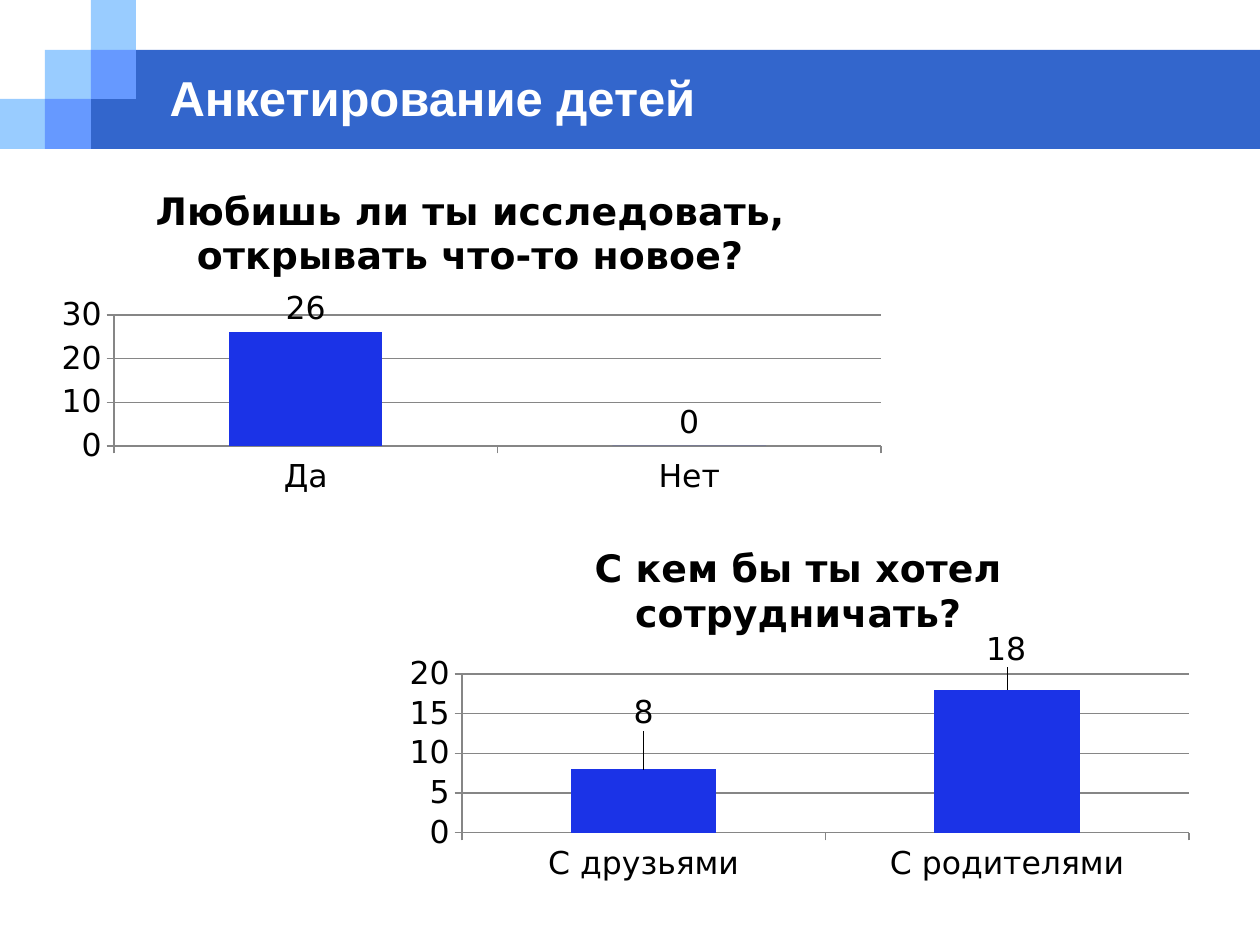
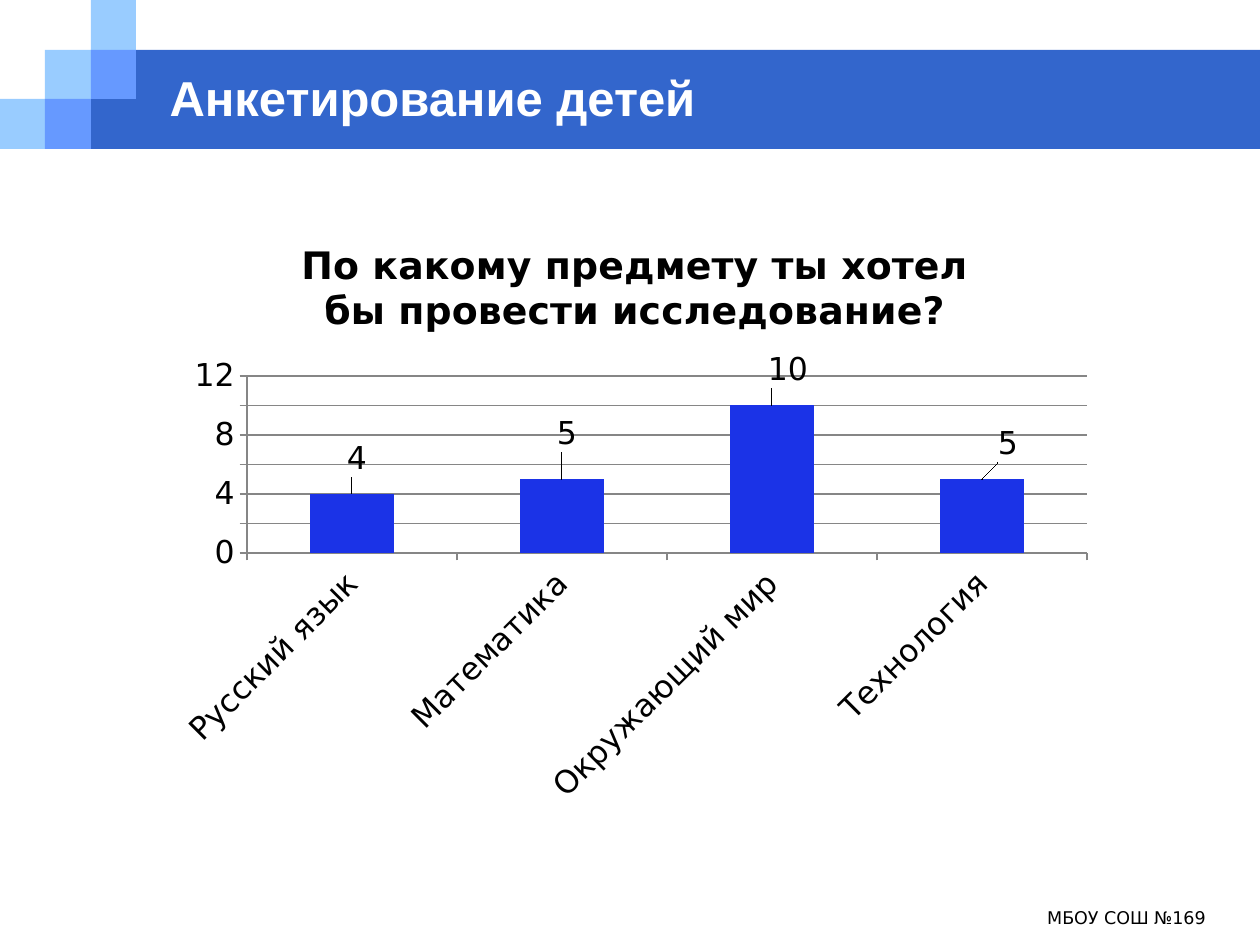
from lxml import etree
from pptx import Presentation
from pptx.chart.data import CategoryChartData
from pptx.dml.color import RGBColor
from pptx.enum.chart import XL_CHART_TYPE, XL_LABEL_POSITION, XL_TICK_MARK
from pptx.enum.shapes import MSO_SHAPE
from pptx.enum.text import MSO_ANCHOR, MSO_AUTO_SIZE, PP_ALIGN
from pptx.oxml.ns import qn
from pptx.util import Pt

COLUMNS = XL_CHART_TYPE.COLUMN_CLUSTERED
OUTSIDE_END = XL_LABEL_POSITION.OUTSIDE_END
TICK_OUTSIDE = XL_TICK_MARK.OUTSIDE
RECTANGLE = MSO_SHAPE.RECTANGLE
MIDDLE = MSO_ANCHOR.MIDDLE
NO_AUTOFIT = MSO_AUTO_SIZE.NONE
LEFT, RIGHT = PP_ALIGN.LEFT, PP_ALIGN.RIGHT

PAGE = (1260, 945)
EMU_PER_INCH, PX_PER_INCH = 914400, 126
TITLE_ONLY = 5

BAND, SKY, PERIWINKLE = "3366CC", "99CCFF", "6699FF"
BAR, AXIS, BLACK, WHITE = "1B33E7", "868686", "000000", "FFFFFF"

TITLE_FONT = {"name": "Arial", "size": Pt(28), "bold": True}
FOOTER_FONT = {"name": "DejaVu Sans", "size": Pt(10), "bold": False}
CHART_FONT = {"name": "DejaVu Sans", "size": Pt(18), "bold": False}
QUESTION_FONT = {"name": "DejaVu Sans", "size": Pt(21.6), "bold": True}

BAND_BOX = (91, 50, 1169, 99)
TITLE_BOX = (157, 63, 1018, 67)
FOOTER_BOX = (819, 901, 399, 44)
# Checkered corner: grid edges, then (column, row, colour)
COLUMN_EDGES = (0, 45, 91, 136)
ROW_EDGES = (0, 50, 99, 149)
SQUARES = [(0, 2, SKY), (1, 1, SKY), (2, 0, SKY),
           (2, 1, PERIWINKLE), (1, 2, PERIWINKLE)]

TITLE = "Анкетирование детей"
SCHOOL = "МБОУ СОШ №169"

# "plot" is relative to the chart box; "shifts" move the value labels
EXPLORE = {
    "question": "Любишь ли ты исследовать, открывать что-то новое?",
    "box": (44, 165, 853, 338), "plot": (70, 150, 767, 131),
    "answers": {"Да": 26, "Нет": 0}, "top": 30, "step": 10,
    "shifts": [], "turn": 0}
PARTNER = {
    "question": "С кем бы ты хотел сотрудничать?",
    "box": (393, 522, 811, 367), "plot": (69, 152, 727, 159),
    "answers": {"С друзьями": 8, "С родителями": 18}, "top": 20, "step": 5,
    "shifts": [(0, -33), (-1, -17)], "turn": 0}
SUBJECT = {
    "question": "По какому предмету ты хотел бы провести исследование?",
    "box": (164, 214, 942, 602), "plot": (83, 162, 840, 177),
    "answers": {"Русский язык": 4, "Математика": 5,
                "Окружающий мир": 10, "Технология": 5},
    "top": 12, "step": 2,
    "shifts": [(5, -12), (5, -22), (16, -12), (26, -12)], "turn": -45}


def px(length):
    return round(length * EMU_PER_INCH / PX_PER_INCH)


def emu(box):
    return [px(length) for length in box]


def rgb(color):
    return RGBColor.from_string(color)


def style(font, values, color):
    for name, value in values.items():
        setattr(font, name, value)
    font.color.rgb = rgb(color)


def write(frame, text, font, color, align):
    frame.word_wrap = True
    frame.auto_size = NO_AUTOFIT
    para = frame.paragraphs[0]
    para.alignment = align
    span = para.add_run()
    span.text = text
    style(span.font, font, color)


def add_block(page, box, color):
    block = page.shapes.add_shape(RECTANGLE, *emu(box))
    block.shadow.inherit = False
    block.fill.solid()
    block.fill.fore_color.rgb = rgb(color)
    block.line.fill.background()
    return block


def draw_header(page):
    """Draw the band and squares, then hand them to the shared layout."""
    blocks = [add_block(page, BAND_BOX, BAND)]
    for column, row, color in SQUARES:
        left, right = COLUMN_EDGES[column:column + 2]
        top, bottom = ROW_EDGES[row:row + 2]
        blocks.append(add_block(page, (left, top, right - left, bottom - top), color))
    tree = page.slide_layout.shapes.element
    for number, block in enumerate(blocks):
        block.element.nvSpPr.cNvPr.set("id", str(100 + number))
        tree.insert(2 + number, block.element)


def add_page(deck):
    page = deck.slides.add_slide(deck.slide_layouts[TITLE_ONLY])
    title = page.shapes.title
    title.left, title.top, title.width, title.height = emu(TITLE_BOX)
    title.text_frame.vertical_anchor = MIDDLE
    write(title.text_frame, TITLE, TITLE_FONT, WHITE, LEFT)
    return page


def add_footer(page):
    footer = page.shapes.add_textbox(*emu(FOOTER_BOX))
    write(footer.text_frame, SCHOOL, FOOTER_FONT, BLACK, RIGHT)


def manual_layout(values):
    layout = etree.Element(qn("c:layout"))
    manual = etree.SubElement(layout, qn("c:manualLayout"))
    for name, value in values.items():
        etree.SubElement(manual, qn(f"c:{name}")).set("val", str(value))
    return layout


def place_plot(chart, box, plot):
    area = chart.element.find(f".//{qn('c:plotArea')}")
    for old in area.findall(qn("c:layout")):
        area.remove(old)
    values = {"layoutTarget": "inner", "xMode": "edge", "yMode": "edge"}
    sizes = box[2:] * 2
    for name, length, size in zip("xywh", plot, sizes):
        values[name] = round(length / size, 4)
    area.insert(0, manual_layout(values))


def shift_labels(chart, box, shifts):
    points = chart.plots[0].series[0].points
    for number in range(len(shifts)):
        points[number].data_label.position = OUTSIDE_END
    labels = chart.element.findall(f".//{qn('c:dLbl')}")
    for label, (across, down) in zip(labels, shifts):
        offset = {"x": round(across / box[2], 4), "y": round(down / box[3], 4)}
        label.insert(1, manual_layout(offset))


def format_axes(chart, top, step, turn):
    values, categories = chart.value_axis, chart.category_axis
    values.minimum_scale, values.maximum_scale = 0, top
    values.major_unit = step
    values.has_major_gridlines = True
    for axis in (values, categories):
        axis.major_tick_mark = TICK_OUTSIDE
        style(axis.tick_labels.font, CHART_FONT, BLACK)
    for line in (values.format.line, categories.format.line,
                 values.major_gridlines.format.line):
        line.color.rgb = rgb(AXIS)
        line.width = Pt(0.75)
    if turn:
        body = chart.element.find(f".//{qn('c:catAx')}/{qn('c:txPr')}/{qn('a:bodyPr')}")
        body.set("rot", str(turn * 60000))
        body.set("vert", "horz")


def add_question(page, survey):
    box, question, answers = survey["box"], survey["question"], survey["answers"]
    data = CategoryChartData()
    data.categories = list(answers)
    data.add_series(question, list(answers.values()))
    chart = page.shapes.add_chart(COLUMNS, *emu(box), data).chart
    style(chart.font, CHART_FONT, BLACK)
    chart.has_legend = False

    # Question above the columns
    chart.has_title = True
    chart.chart_title.include_in_layout = False
    span = chart.chart_title.text_frame.paragraphs[0].add_run()
    span.text = question
    style(span.font, QUESTION_FONT, BLACK)

    # Columns and their values
    columns = chart.plots[0]
    columns.vary_by_categories = False
    columns.gap_width = 150
    series = columns.series[0]
    series.format.fill.solid()
    series.format.fill.fore_color.rgb = rgb(BAR)
    series.data_labels.show_value = True
    series.data_labels.position = OUTSIDE_END
    style(series.data_labels.font, CHART_FONT, BLACK)

    format_axes(chart, survey["top"], survey["step"], survey["turn"])
    place_plot(chart, box, survey["plot"])
    shift_labels(chart, box, survey["shifts"])


def main():
    deck = Presentation()
    deck.slide_width, deck.slide_height = emu(PAGE)

    page = add_page(deck)
    draw_header(page)
    add_question(page, EXPLORE)
    add_question(page, PARTNER)

    page = add_page(deck)
    add_footer(page)
    add_question(page, SUBJECT)

    deck.save("out.pptx")


if __name__ == "__main__":
    main()
